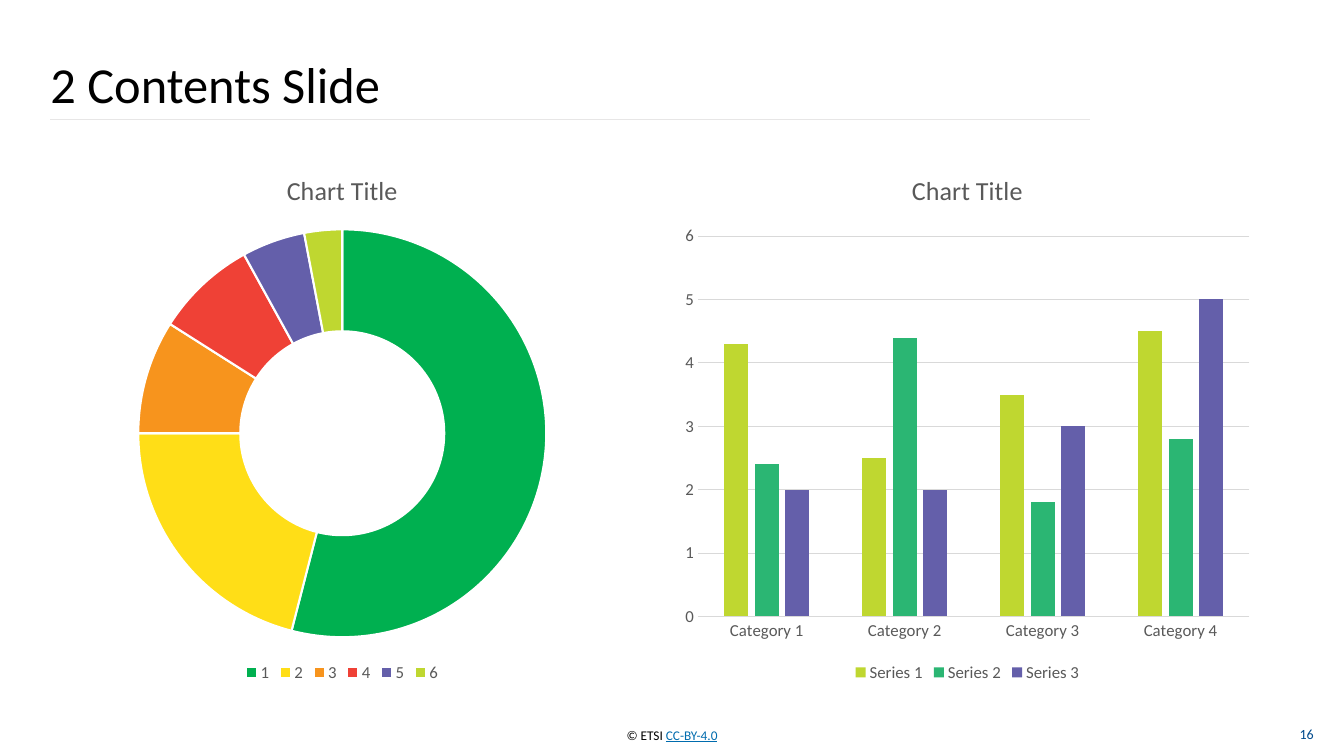
"""Builds a contents slide with a doughnut chart and a clustered column chart."""
from lxml import etree
from pptx import Presentation
from pptx.chart.data import CategoryChartData
from pptx.dml.color import RGBColor
from pptx.enum.chart import XL_CHART_TYPE, XL_LEGEND_POSITION, XL_TICK_MARK
from pptx.enum.shapes import MSO_CONNECTOR
from pptx.enum.text import MSO_ANCHOR, MSO_AUTO_SIZE, PP_ALIGN
from pptx.oxml.ns import qn
from pptx.util import Inches, Pt

DOUGHNUT = XL_CHART_TYPE.DOUGHNUT
COLUMNS = XL_CHART_TYPE.COLUMN_CLUSTERED
BOTTOM = XL_LEGEND_POSITION.BOTTOM
NO_TICK = XL_TICK_MARK.NONE
STRAIGHT = MSO_CONNECTOR.STRAIGHT
LEFT, CENTER, RIGHT = PP_ALIGN.LEFT, PP_ALIGN.CENTER, PP_ALIGN.RIGHT
TOP, MIDDLE, BASE = MSO_ANCHOR.TOP, MSO_ANCHOR.MIDDLE, MSO_ANCHOR.BOTTOM

FONT = "Calibri"
COLORS = {
    "black": "000000", "white": "FFFFFF", "gray": "595959", "grid": "D9D9D9",
    "rule": "E7E6E6", "link": "006CAE", "navy": "004A8D", "green": "00B050",
    "yellow": "FFDE17", "orange": "F7941D", "red": "EF4136",
    "purple": "645FAA", "lime": "BFD730", "teal": "2BB673",
}
SLICES = {"1": (54, "green"), "2": (21, "yellow"), "3": (9, "orange"),
          "4": (8, "red"), "5": (5, "purple"), "6": (3, "lime")}
CATEGORIES = [f"Category {n}" for n in range(1, 5)]
SERIES = {"Series 1": ((4.3, 2.5, 3.5, 4.5), "lime"),
          "Series 2": ((2.4, 4.4, 1.8, 2.8), "teal"),
          "Series 3": ((2, 2, 3, 5), "purple")}


def rgb(name):
    return RGBColor.from_string(COLORS[name])


def set_font(font, size, color, **extra):
    for key, value in {"name": FONT, "size": Pt(size), "bold": False, **extra}.items():
        setattr(font, key, value)
    font.color.rgb = rgb(color)


def paint(fill, color):
    fill.solid()
    fill.fore_color.rgb = rgb(color)


def draw_line(line, color, width):
    paint(line.fill, color)
    line.width = Pt(width)


def fill_text(sp, runs, size, align, anchor, wrap):
    tf = sp.text_frame
    frame = {"margin_left": 0, "margin_right": 0, "margin_top": 0,
             "margin_bottom": 0, "vertical_anchor": anchor,
             "word_wrap": wrap, "auto_size": MSO_AUTO_SIZE.NONE}
    for key, value in frame.items():
        setattr(tf, key, value)
    p = tf.paragraphs[0]
    p.alignment = align
    for text, color, underline in runs:
        r = p.add_run()
        r.text = text
        set_font(r.font, size, color, underline=underline)
    return p


def add_title(s, text):
    sp = s.shapes.title
    sp.left, sp.top, sp.width, sp.height = map(Inches, (0.5, 0.57, 10.91, 0.57))
    p = fill_text(sp, [(text, "black", False)], 36, LEFT, BASE, True)
    p.line_spacing = 0.9


def add_text(s, box, runs, size, align, anchor):
    sp = s.shapes.add_textbox(*map(Inches, box))
    fill_text(sp, runs, size, align, anchor, False)


def add_rule(s, left, right, y):
    rule = s.shapes.add_connector(STRAIGHT, *map(Inches, (left, y, right, y)))
    draw_line(rule.line, "rule", 0.75)
    etree.SubElement(rule._element.spPr, qn("a:effectLst"))


def add_chart(s, kind, box, categories, series):
    data = CategoryChartData()
    data.categories = categories
    for name, values in series:
        data.add_series(name, values)
    chart = s.shapes.add_chart(kind, *map(Inches, box), data).chart
    set_font(chart.font, 10, "black")
    chart.has_title = True
    p = chart.chart_title.text_frame.paragraphs[0]
    r = p.add_run()
    r.text = "Chart Title"
    set_font(r.font, 18.6, "gray")
    chart.has_legend = True
    chart.legend.position = BOTTOM
    chart.legend.include_in_layout = False
    set_font(chart.legend.font, 12, "gray")
    return chart


def add_doughnut(s, box):
    values = [value for value, _ in SLICES.values()]
    plot = add_chart(s, DOUGHNUT, box, SLICES, [("Chart Title", values)]).plots[0]
    plot._element.find(qn("c:holeSize")).set("val", "87")
    for i, (_, color) in enumerate(SLICES.values()):
        fmt = plot.series[0].points[i].format
        paint(fmt.fill, color)
        draw_line(fmt.line, "white", 1.5)


def add_columns(s, box):
    series = [(name, values) for name, (values, _) in SERIES.items()]
    chart = add_chart(s, COLUMNS, box, CATEGORIES, series)
    plot = chart.plots[0]
    for key, value in {"gap_width": 219, "overlap": -27,
                       "vary_by_categories": False}.items():
        setattr(plot, key, value)
    for ser, (_, color) in zip(plot.series, SERIES.values()):
        paint(ser.format.fill, color)
    for axis in (chart.category_axis, chart.value_axis):
        axis.major_tick_mark = axis.minor_tick_mark = NO_TICK
        set_font(axis.tick_labels.font, 12, "gray")
    draw_line(chart.category_axis.format.line, "grid", 0.75)
    values = chart.value_axis
    for key, value in {"minimum_scale": 0, "maximum_scale": 6,
                       "major_unit": 1, "has_major_gridlines": True}.items():
        setattr(values, key, value)
    values.format.line.fill.background()
    draw_line(values.major_gridlines.format.line, "grid", 0.75)


def main():
    prs = Presentation()
    prs.slide_width, prs.slide_height = Inches(13.33), Inches(7.5)
    s = prs.slides.add_slide(prs.slide_layouts[5])
    add_text(s, (6.14, 7.21, 1.05, 0.16),
             [("© ETSI ", "black", False), ("CC-BY-4.0", "link", True)],
             9.5, CENTER, TOP)
    add_rule(s, 0.5, 10.81, 1.19)
    add_title(s, "2 Contents Slide")
    add_text(s, (12.64, 7.15, 0.39, 0.26), [("16", "navy", False)],
             10, RIGHT, MIDDLE)
    add_doughnut(s, (0.5, 1.5, 5.79, 5.31))
    add_columns(s, (6.68, 1.5, 5.83, 5.31))
    prs.save("out.pptx")


if __name__ == "__main__":
    main()
